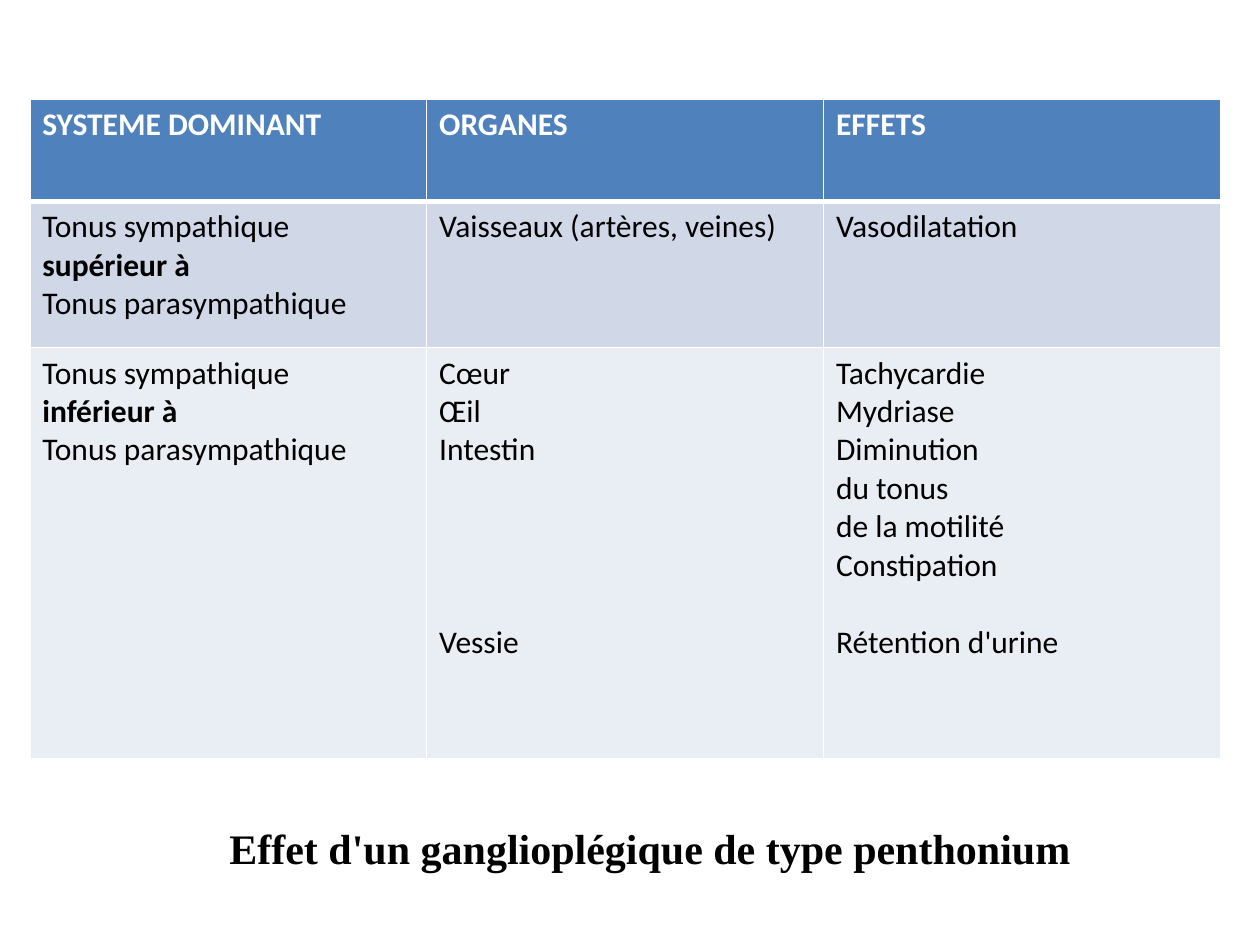
from dataclasses import dataclass

from lxml import etree
from pptx import Presentation
from pptx.dml.color import RGBColor
from pptx.enum.text import MSO_ANCHOR, PP_ALIGN
from pptx.oxml.ns import qn
from pptx.slide import Slide
from pptx.table import _Cell
from pptx.text.text import _Paragraph
from pptx.util import Cm, Pt

LEFT, TOP = PP_ALIGN.LEFT, MSO_ANCHOR.TOP

WHITE = RGBColor(0xFF, 0xFF, 0xFF)
BLACK = RGBColor(0x00, 0x00, 0x00)
HEADER_BLUE = RGBColor(0x4F, 0x81, 0xBD)
BAND_DARK = RGBColor(0xD0, 0xD8, 0xE8)
BAND_LIGHT = RGBColor(0xE9, 0xED, 0xF4)

LINE_HEIGHT = 22  # points, one line of 18 pt body text
COLUMN_WIDTH = 8.0


@dataclass(frozen=True)
class Line:
    text: str
    bold: bool = False
    gap_lines: int = 0  # empty lines above


@dataclass(frozen=True)
class Row:
    height: float
    fill: RGBColor
    color: RGBColor
    cells: tuple[tuple[Line, ...], ...]
    bottom_border: int = 1


def lines(*texts: str) -> tuple[Line, ...]:
    return tuple(Line(text) for text in texts)


def tonus(comparison: str) -> tuple[Line, ...]:
    return (Line("Tonus sympathique"), Line(comparison, bold=True),
            Line("Tonus parasympathique"))


HEADINGS = ("SYSTEME DOMINANT", "ORGANES", "EFFETS")
ROWS = (
    Row(2.06, HEADER_BLUE, WHITE,
        tuple((Line(heading, bold=True),) for heading in HEADINGS), bottom_border=3),
    Row(2.95, BAND_DARK, BLACK,
        (tonus("supérieur à"), lines("Vaisseaux (artères, veines)"),
         lines("Vasodilatation"))),
    Row(8.28, BAND_LIGHT, BLACK,
        (tonus("inférieur à"),
         lines("Cœur", "Œil", "Intestin") + (Line("Vessie", gap_lines=4),),
         lines("Tachycardie", "Mydriase", "Diminution", "du tonus",
               "de la motilité", "Constipation")
         + (Line("Rétention d'urine", gap_lines=1),))),
)


def add_text(paragraph: _Paragraph, text: str, name: str, size: int,
             color: RGBColor, bold: bool) -> None:
    run = paragraph.add_run()
    run.text = text
    for attribute, value in {"name": name, "size": Pt(size), "bold": bold}.items():
        setattr(run.font, attribute, value)
    run.font.color.rgb = color


def set_borders(cell: _Cell, widths: dict[str, int]) -> None:
    properties = cell._tc.get_or_add_tcPr()
    for side, width in widths.items():
        border = etree.SubElement(properties, qn(f"a:ln{side}"), w=str(Pt(width)))
        solid = etree.SubElement(border, qn("a:solidFill"))
        etree.SubElement(solid, qn("a:srgbClr"), val=str(WHITE))


def fill_cell(cell: _Cell, content: tuple[Line, ...], row: Row, top_border: int) -> None:
    set_borders(cell, {"L": 1, "R": 1, "T": top_border, "B": row.bottom_border})
    cell.fill.solid()
    cell.fill.fore_color.rgb = row.fill
    frame = cell.text_frame
    for index, line in enumerate(content):
        paragraph = frame.add_paragraph() if index else frame.paragraphs[0]
        if line.gap_lines:
            paragraph.space_before = Pt(line.gap_lines * LINE_HEIGHT)
        add_text(paragraph, line.text, "Calibri", 18, row.color, line.bold)


def add_effects_table(slide: Slide) -> None:
    columns = len(HEADINGS)
    table = slide.shapes.add_table(
        len(ROWS), columns, Cm(0.6), Cm(2), Cm(columns * COLUMN_WIDTH),
        Cm(sum(row.height for row in ROWS))).table
    for column in table.columns:
        column.width = Cm(COLUMN_WIDTH)
    top_border = 1
    for row_index, row in enumerate(ROWS):
        table.rows[row_index].height = Cm(row.height)
        for column_index, content in enumerate(row.cells):
            fill_cell(table.cell(row_index, column_index), content, row, top_border)
        top_border = row.bottom_border


def place_title(slide: Slide) -> None:
    title = slide.shapes.title
    position = {"left": Cm(4.37), "top": Cm(16.46), "width": Cm(17.86), "height": Cm(1.27)}
    for attribute, value in position.items():
        setattr(title, attribute, value)
    title.text_frame.vertical_anchor = TOP
    title.text_frame.word_wrap = True
    paragraph = title.text_frame.paragraphs[0]
    paragraph.alignment = LEFT
    add_text(paragraph, "Effet d'un ganglioplégique de type penthonium",
             "Times New Roman", 24, BLACK, True)


def main() -> None:
    presentation = Presentation()
    presentation.slide_width, presentation.slide_height = Cm(25.4), Cm(19.05)
    slide = presentation.slides.add_slide(presentation.slide_layouts[5])

    # Table of effects by dominant system
    add_effects_table(slide)

    # Title set below the table
    place_title(slide)

    presentation.save("out.pptx")


if __name__ == "__main__":
    main()
